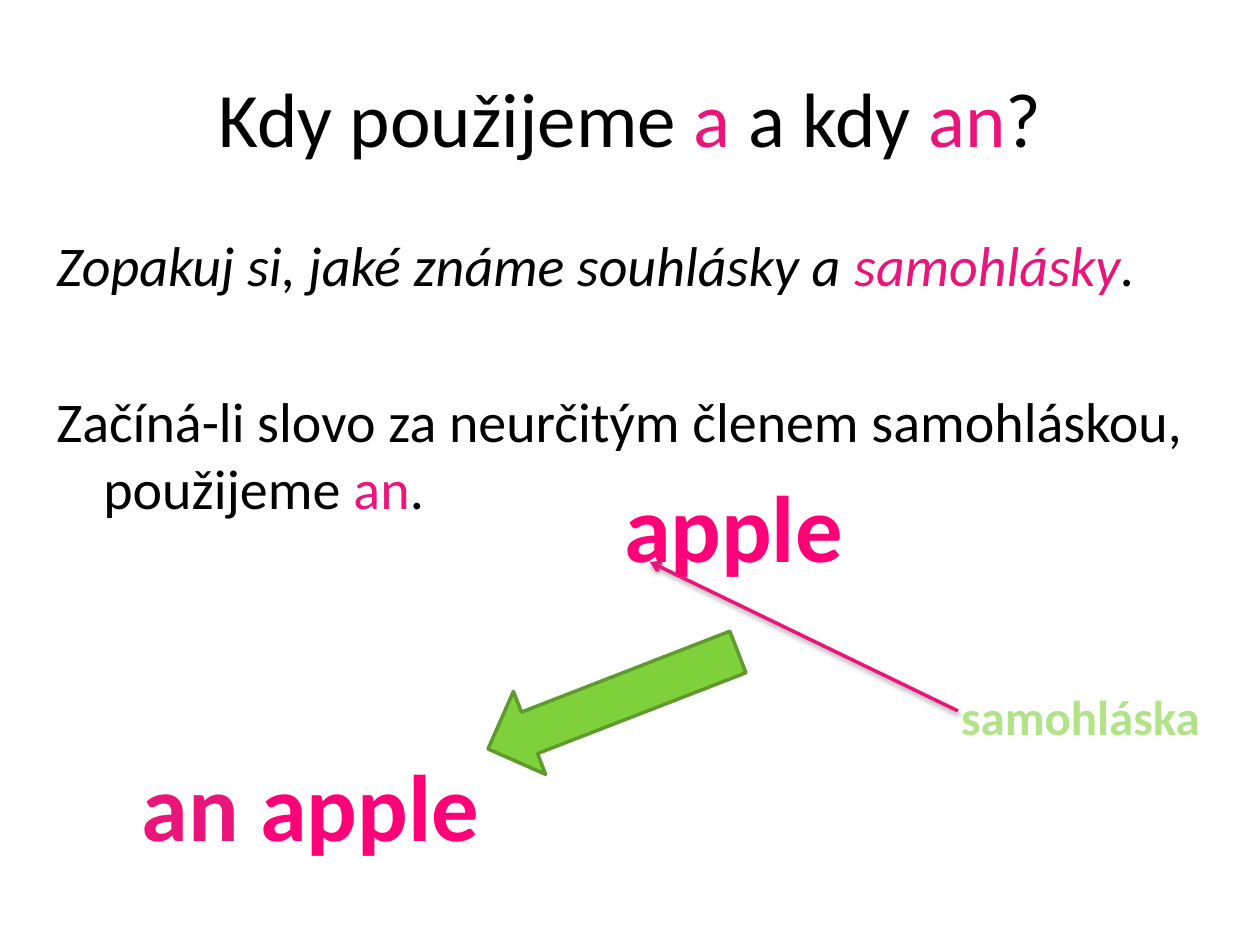
import lxml.etree
import pptx
import pptx.dml.color
import pptx.enum.shapes
import pptx.enum.text
import pptx.oxml
import pptx.oxml.ns
import pptx.util

PX = 914400 / 126
FONT = "Calibri"
COLORS = {
    "black": "000000", "pink": "EA157A", "hot pink": "FF0079",
    "pale green": "B2E389", "green": "7FD13B", "dark green": "5E9B2C",
}
ALIGN = pptx.enum.text.PP_ALIGN
ANCHOR = pptx.enum.text.MSO_ANCHOR

# Each paragraph is a list of (text, colour) runs.
TITLE = [[("Kdy použijeme ", "black"), ("a ", "pink"), ("a kdy ", "black"),
          ("an", "pink"), ("?", "black")]]
RULES = [
    [("Zopakuj si, jaké známe souhlásky a ", "black"),
     ("samohlásky", "pink"), (".", "black")],
    [("Začíná-li slovo za neurčitým členem samohláskou, použijeme ", "black"),
     ("an", "pink"), (".", "black")],
]
# (box in px, size, wraps, runs)
LABELS = [
    ((610, 462, 247, 127), 54, False, [("apple", "hot pink")]),
    ((927, 680, 307, 72), 28, True, [("samohláska", "pale green")]),
    ((127, 741, 367, 127), 54, False, [("an ", "pink"), ("apple", "hot pink")]),
]
TITLE_BOX = (63, 38, 1134, 158)
RULES_BOX = (44, 224, 1172, 331)
RULE_GAP = 51
RULE_INDENT = 47
POINTER = (958, 711, 650, 562)
ARROW_BOX = (479, 656, 268, 89)
ARROW_ROTATION = -21.2


def emu(*lengths):
    return [pptx.util.Emu(round(length * PX)) for length in lengths]


def rgb(name):
    return pptx.dml.color.RGBColor.from_string(COLORS[name])


def add_text(slide, box, paragraphs, size, align=ALIGN.CENTER,
             anchor=ANCHOR.TOP, bold=False, wrap=True):
    frame = slide.shapes.add_textbox(*emu(*box)).text_frame
    frame.word_wrap = wrap
    frame.vertical_anchor = anchor
    for index, runs in enumerate(paragraphs):
        paragraph = frame.add_paragraph() if index else frame.paragraphs[0]
        paragraph.alignment = align
        for text, color in runs:
            run = paragraph.add_run()
            run.text = text
            run.font.name = FONT
            run.font.size = pptx.util.Pt(size)
            run.font.bold = bold
            run.font.color.rgb = rgb(color)
    return frame


def add_rules(slide):
    frame = add_text(slide, RULES_BOX, RULES, 32, ALIGN.LEFT)
    indent = emu(RULE_INDENT)[0]
    for paragraph in frame.paragraphs:
        properties = paragraph._p.get_or_add_pPr()
        properties.set("marL", str(indent))
        properties.set("indent", str(-indent))
    reminder, rule = frame.paragraphs
    for run in reminder.runs:
        run.font.italic = True
    rule.space_before = pptx.util.Pt(RULE_GAP)


def add_pointer(slide):
    """Line from the label to the first letter, with open head and soft shadow."""
    pointer = slide.shapes.add_connector(
        pptx.enum.shapes.MSO_CONNECTOR.STRAIGHT, *emu(*POINTER))
    pointer.line.color.rgb = rgb("pink")
    pointer.line.width = pptx.util.Pt(2)
    head = lxml.etree.SubElement(pointer.line._get_or_add_ln(),
                                 pptx.oxml.ns.qn("a:tailEnd"))
    head.set("type", "arrow")
    pointer._element.spPr.append(pptx.oxml.parse_xml(
        f'<a:effectLst {pptx.oxml.ns.nsdecls("a")}>'
        '<a:outerShdw blurRad="40000" dist="20000" dir="5400000" rotWithShape="0">'
        f'<a:srgbClr val="{COLORS["black"]}"><a:alpha val="38000"/></a:srgbClr>'
        '</a:outerShdw></a:effectLst>'))


def add_arrow(slide):
    arrow = slide.shapes.add_shape(
        pptx.enum.shapes.MSO_SHAPE.LEFT_ARROW, *emu(*ARROW_BOX))
    arrow.rotation = ARROW_ROTATION
    arrow.shadow.inherit = False
    arrow.fill.solid()
    arrow.fill.fore_color.rgb = rgb("green")
    arrow.line.color.rgb = rgb("dark green")
    arrow.line.width = pptx.util.Pt(2)


def main():
    presentation = pptx.Presentation()
    presentation.slide_width, presentation.slide_height = emu(1260, 945)
    slide = presentation.slides.add_slide(presentation.slide_layouts[6])
    add_text(slide, TITLE_BOX, TITLE, 44, anchor=ANCHOR.MIDDLE)
    add_rules(slide)
    for box, size, wrap, runs in LABELS:
        add_text(slide, box, [runs], size, bold=True, wrap=wrap)
    add_pointer(slide)
    add_arrow(slide)
    presentation.save("out.pptx")


if __name__ == "__main__":
    main()
